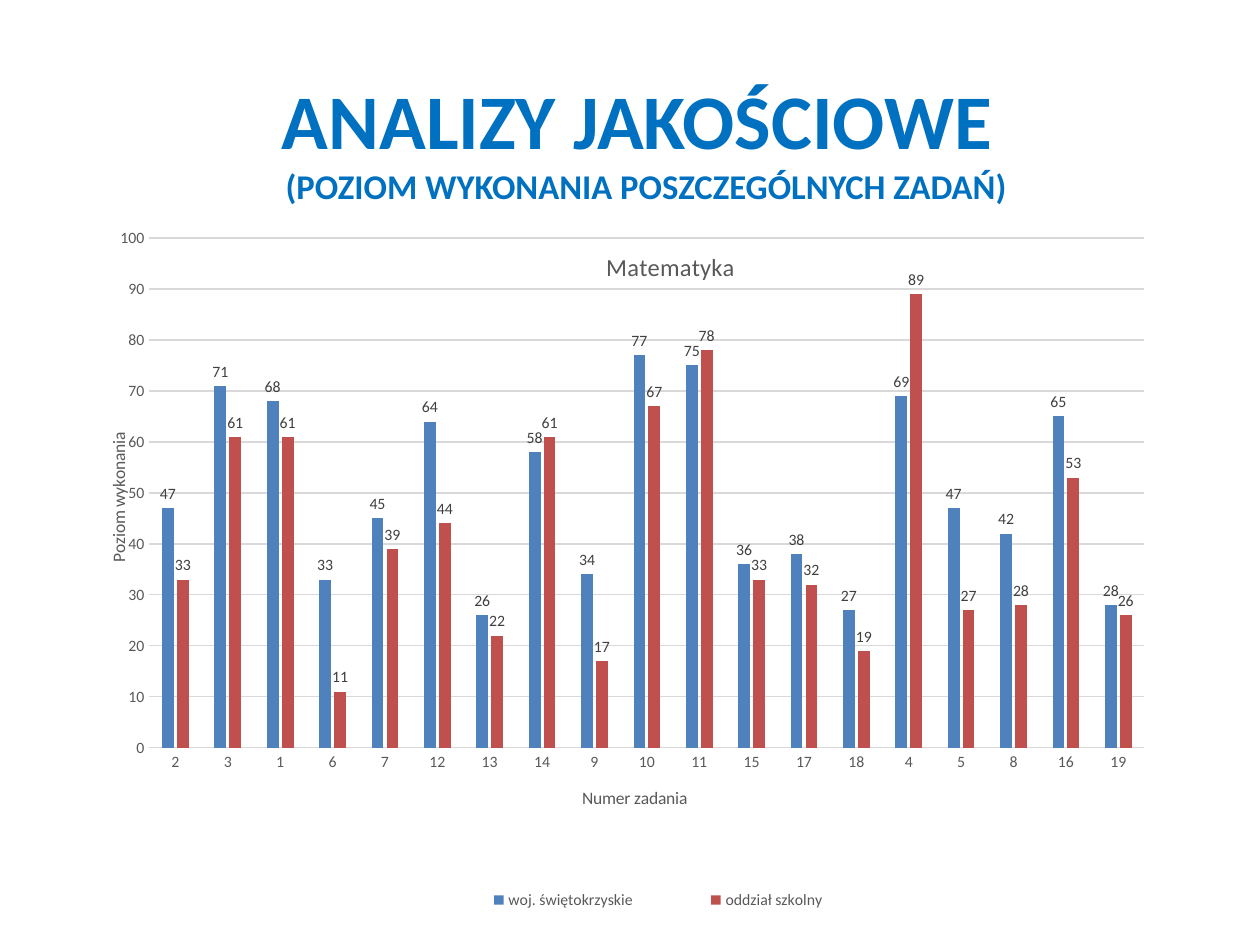
from dataclasses import dataclass

from lxml import etree
from pptx import Presentation
from pptx.chart.data import CategoryChartData
from pptx.dml.color import RGBColor
from pptx.enum.chart import XL_CHART_TYPE, XL_LABEL_POSITION, XL_LEGEND_POSITION, XL_TICK_MARK
from pptx.enum.text import MSO_ANCHOR, MSO_AUTO_SIZE, PP_ALIGN
from pptx.oxml.ns import qn
from pptx.util import Pt

COLUMNS = XL_CHART_TYPE.COLUMN_CLUSTERED
OUTSIDE_END = XL_LABEL_POSITION.OUTSIDE_END
LEGEND_BOTTOM = XL_LEGEND_POSITION.BOTTOM
NO_TICK = XL_TICK_MARK.NONE
CENTER = PP_ALIGN.CENTER
MIDDLE = MSO_ANCHOR.MIDDLE
NO_AUTOFIT = MSO_AUTO_SIZE.NONE
TITLE_ONLY = 5
EMU_PER_PX = 914400 / 126


@dataclass(frozen=True)
class Theme:
    font: str = "Calibri"
    heading: str = "0070C0"
    text: str = "595959"
    label: str = "404040"
    grid: str = "D9D9D9"
    series: tuple = ("4F81BD", "C0504D")
    heading_size: float = 44.1
    subheading_size: float = 19.8
    chart_title_size: float = 14
    axis_title_size: float = 10
    small_size: float = 9


THEME = Theme()

TASKS = (2, 3, 1, 6, 7, 12, 13, 14, 9, 10, 11, 15, 17, 18, 4, 5, 8, 16, 19)
RESULTS = {
    "woj. świętokrzyskie": (47, 71, 68, 33, 45, 64, 26, 58, 34, 77,
                            75, 36, 38, 27, 69, 47, 42, 65, 28),
    "oddział szkolny": (33, 61, 61, 11, 39, 44, 22, 61, 17, 67,
                        78, 33, 32, 19, 89, 27, 28, 53, 26),
}


def px(length):
    return round(length * EMU_PER_PX)


def set_font(font, size, color, bold=False):
    font.name = THEME.font
    font.size = Pt(size)
    font.bold = bold
    font.color.rgb = RGBColor.from_string(color)


def add_span(para, text, **style):
    span = para.add_run()
    span.text = text
    set_font(span.font, **style)


def set_layout(parent, after, **values):
    """Place a chart part by fractions of the chart, after the named child."""
    for old in parent.findall(qn("c:layout")):
        parent.remove(old)
    layout = etree.Element(qn("c:layout"))
    manual = etree.SubElement(layout, qn("c:manualLayout"))
    for name, value in values.items():
        etree.SubElement(manual, qn(f"c:{name}")).set("val", str(value))
    index = parent.index(parent.find(qn(after))) + 1 if after else 0
    parent.insert(index, layout)


def set_chart_title(title, text, size, x, y):
    para = title.text_frame.paragraphs[0]
    add_span(para, text, size=size, color=THEME.text)
    set_layout(title._element, "c:tx", xMode="edge", yMode="edge", x=x, y=y)


# Heading: one placeholder with a large and a small line
def draw_heading(page, left, top, width, height):
    title = page.shapes.title
    title.left, title.top, title.width, title.height = map(px, (left, top, width, height))
    frame = title.text_frame
    frame.word_wrap = True
    frame.auto_size = NO_AUTOFIT
    frame.vertical_anchor = MIDDLE
    para = frame.paragraphs[0]
    para.alignment = CENTER
    add_span(para, "ANALIZY JAKOŚCIOWE ", size=THEME.heading_size,
             color=THEME.heading, bold=True)
    para.add_line_break()
    add_span(para, "(POZIOM WYKONANIA POSZCZEGÓLNYCH ZADAŃ)",
             size=THEME.subheading_size, color=THEME.heading, bold=True)


def format_axes(chart):
    tasks, level = chart.category_axis, chart.value_axis
    for axis in (tasks, level):
        axis.major_tick_mark = axis.minor_tick_mark = NO_TICK
        set_font(axis.tick_labels.font, THEME.small_size, THEME.text)
    level.minimum_scale, level.maximum_scale, level.major_unit = 0, 100, 10
    level.format.line.fill.background()
    level.has_major_gridlines = True
    for line in (tasks.format.line, level.major_gridlines.format.line):
        line.color.rgb = RGBColor.from_string(THEME.grid)
        line.width = Pt(0.75)
    set_chart_title(tasks.axis_title, "Numer zadania", THEME.axis_title_size, 0.42, 0.79)
    # Flush with the chart edge, clear of the value labels
    set_chart_title(level.axis_title, "Poziom wykonania", THEME.axis_title_size, 0, 0.29)


def format_columns(plot):
    plot.gap_width = 219
    plot.overlap = -27
    plot.vary_by_categories = False
    for series, color in zip(plot.series, THEME.series):
        series.format.fill.solid()
        series.format.fill.fore_color.rgb = RGBColor.from_string(color)
        series.invert_if_negative = False
        labels = series.data_labels
        labels.show_value = True
        labels.position = OUTSIDE_END
        set_font(labels.font, THEME.small_size, THEME.label)


def format_legend(chart):
    chart.has_legend = True
    legend = chart.legend
    legend.position = LEGEND_BOTTOM
    legend.include_in_layout = False
    set_font(legend.font, THEME.small_size, THEME.text)
    set_layout(legend._element, "c:legendPos", xMode="edge", yMode="edge",
               x=0.28, y=0.93, w=0.42, h=0.05)


# Chart: clustered columns with titles, axes and legend
def draw_chart(page, left, top, width, height):
    data = CategoryChartData()
    data.categories = [str(task) for task in TASKS]
    for name, values in RESULTS.items():
        data.add_series(name, values)
    box = map(px, (left, top, width, height))
    chart = page.shapes.add_chart(COLUMNS, *box, data).chart
    chart.font.name = THEME.font
    chart.font.size = Pt(10)

    chart.has_title = True
    set_chart_title(chart.chart_title, "Matematyka", THEME.chart_title_size, 0.44, 0.03)
    format_axes(chart)
    format_columns(chart.plots[0])
    format_legend(chart)
    plot_area = chart._chartSpace.find(".//" + qn("c:plotArea"))
    # The plot leaves a strip on the left for the axis title and labels
    set_layout(plot_area, None, layoutTarget="inner", xMode="edge", yMode="edge",
               x=0.04, y=0.02, w=0.88, h=0.72)


def main():
    deck = Presentation()
    deck.slide_width, deck.slide_height = px(1260), px(945)
    page = deck.slides.add_slide(deck.slide_layouts[TITLE_ONLY])
    draw_heading(page, 105, 70, 1082, 139)
    draw_chart(page, 104, 224, 1131, 708)
    deck.save("out.pptx")


if __name__ == "__main__":
    main()
